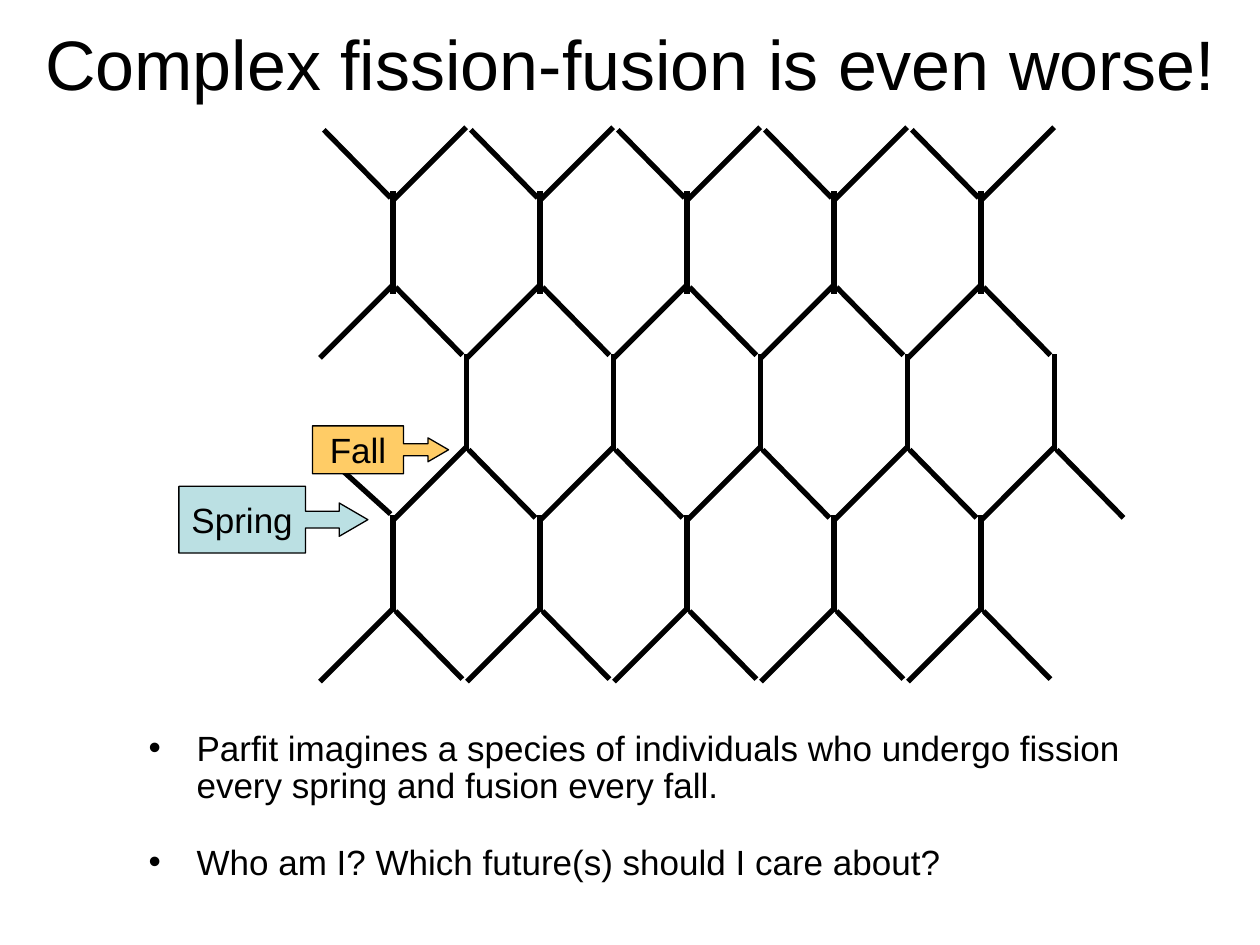
from dataclasses import dataclass

from lxml.etree import SubElement
from pptx import Presentation
from pptx.dml.color import RGBColor
from pptx.enum.shapes import MSO_CONNECTOR as Connector, MSO_SHAPE as Shape
from pptx.enum.text import MSO_ANCHOR as Anchor, MSO_AUTO_SIZE as AutoSize, PP_ALIGN as Align
from pptx.oxml.ns import qn
from pptx.util import Inches, Pt


@dataclass(frozen=True)
class Theme:
    font: str = "Arial"
    ink: RGBColor = RGBColor(0, 0, 0)
    paper: RGBColor = RGBColor(255, 255, 255)
    spring: RGBColor = RGBColor(0xBB, 0xE0, 0xE3)
    fall: RGBColor = RGBColor(0xFF, 0xCC, 0x66)
    title_size: int = 40
    text_size: int = 20
    branch_width: float = 3
    outline_width: float = 0.75


THEME = Theme()

TITLE = "Complex fission-fusion is even worse!"
POINTS = [
    "Parfit imagines a species of individuals who undergo fission every spring and fusion every fall.",
    "Who am I? Which future(s) should I care about?",
]

FORKS_PER_ROW = 5
FORK_PITCH = 7 / 6
# First fork's x, stem's start y, and 1 for opening downwards or -1 for upwards
FORK_ROWS = [(3.12, 4.09, 1), (3.12, 2.33, -1), (3.12, 1.52, 1), (3.7, 2.81, 1)]
# Each fork is two stems, each followed by its branch, relative to the stem's start
FORK_LINES = [
    ((0, 0), (0, 0.76)),
    ((0.01, 0.73), (-0.58, 1.32)),
    ((0, 0.01), (0, 0.77)),
    ((0.02, 0.76), (0.55, 1.3)),
]


def place(shape, left, top, width, height):
    shape.left, shape.top = Inches(left), Inches(top)
    shape.width, shape.height = Inches(width), Inches(height)


def write(paragraph, text, size=THEME.text_size, align=Align.LEFT, color=THEME.ink):
    paragraph.alignment = align
    run = paragraph.add_run()
    run.text = text
    run.font.name = THEME.font
    run.font.size = Pt(size)
    run.font.color.rgb = color


def add_bullet(paragraph, indent):
    properties = paragraph._p.get_or_add_pPr()
    properties.set("marL", str(Inches(indent)))
    properties.set("indent", str(-Inches(indent)))
    SubElement(properties, qn("a:buChar")).set("char", "•")


def fill_title(title):
    place(title, 0, 0, 10, 1)
    frame = title.text_frame
    frame.auto_size = AutoSize.NONE
    frame.vertical_anchor = Anchor.MIDDLE
    write(frame.paragraphs[0], TITLE, size=THEME.title_size, align=Align.CENTER)


def fill_body(body):
    place(body, 1.08, 5.75, 8.5, 1.42)
    body.fill.solid()
    body.fill.fore_color.rgb = THEME.paper
    frame = body.text_frame
    frame.auto_size = AutoSize.NONE
    frame.vertical_anchor = Anchor.TOP
    for index, point in enumerate(POINTS):
        paragraph = frame.add_paragraph() if index else frame.paragraphs[0]
        write(paragraph, point)
        paragraph.line_spacing = 0.9
        paragraph.space_before = Pt(4)
        paragraph.space_after = Pt(18)
        add_bullet(paragraph, 0.38)


def add_line(shapes, start, end):
    ends = [Inches(length) for length in (*start, *end)]
    line = shapes.add_connector(Connector.STRAIGHT, *ends)
    line.line.color.rgb = THEME.ink
    line.line.width = Pt(THEME.branch_width)
    SubElement(line._element.spPr, qn("a:effectLst"))


def add_fork(shapes, x, y, direction):
    """Draw a stem that splits in two; direction -1 turns it upside down."""
    for line in FORK_LINES:
        start, end = [(x + direction * dx, y + direction * dy) for dx, dy in line]
        add_line(shapes, start, end)


def add_callout(shapes, text, box, color, head, body):
    """Draw a right arrow callout; head and body are its adjustable lengths."""
    callout = shapes.add_shape(Shape.RIGHT_ARROW_CALLOUT, *[Inches(length) for length in box])
    for index, value in enumerate((0.25, 0.25, head, body)):
        callout.adjustments[index] = value
    callout.shadow.inherit = False
    callout.fill.solid()
    callout.fill.fore_color.rgb = color
    callout.line.color.rgb = THEME.ink
    callout.line.width = Pt(THEME.outline_width)
    frame = callout.text_frame
    frame.word_wrap = False
    frame.vertical_anchor = Anchor.MIDDLE
    write(frame.paragraphs[0], text, align=Align.CENTER)


def add_network(shapes):
    for first_x, y, direction in FORK_ROWS:
        for column in range(FORKS_PER_ROW):
            add_fork(shapes, first_x + column * FORK_PITCH, y, direction)
    add_callout(shapes, "Spring", (1.42, 3.86, 1.5, 0.53), THEME.spring, head=0.43, body=0.67)
    add_line(shapes, (3.1, 4.08), (2.58, 3.61))
    add_callout(shapes, "Fall", (2.48, 3.38, 1.08, 0.38), THEME.fall, head=0.43, body=0.67)


def main():
    presentation = Presentation()
    presentation.slide_width, presentation.slide_height = Inches(10), Inches(7.5)
    slide = presentation.slides.add_slide(presentation.slide_layouts[1])
    fill_title(slide.shapes.title)
    fill_body(slide.placeholders[1])
    add_network(slide.shapes.add_group_shape().shapes)
    presentation.save("out.pptx")


if __name__ == "__main__":
    main()
